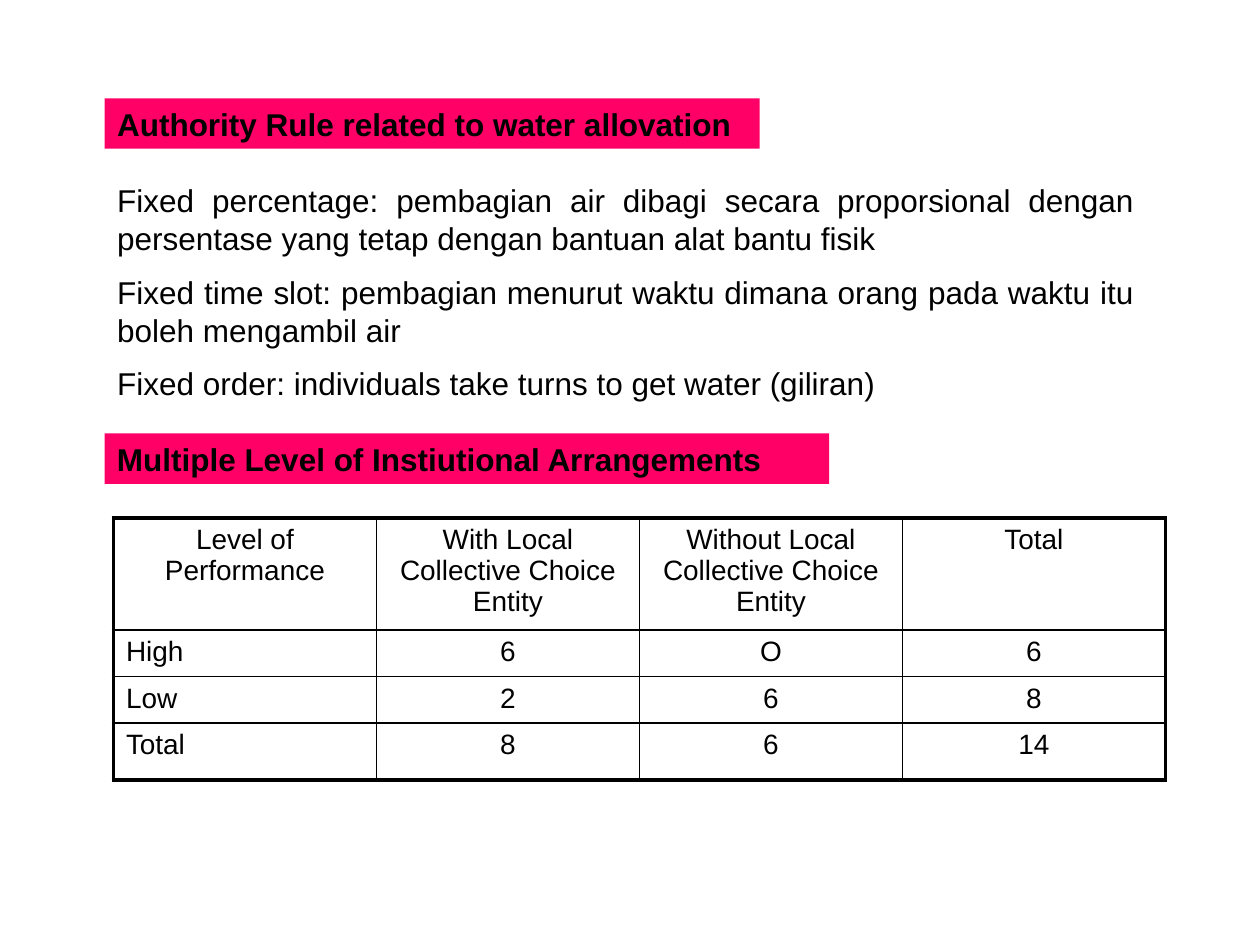
"""Build the slide on water allocation rules and institutional arrangements."""
from dataclasses import dataclass

from lxml.etree import SubElement
from pptx import Presentation
from pptx.dml.color import RGBColor
from pptx.enum.text import MSO_ANCHOR, MSO_AUTO_SIZE, PP_ALIGN
from pptx.oxml.ns import qn
from pptx.util import Inches, Pt

BLACK, PINK = "000000", "FF0066"
THIN, THICK = 1, 2.25
LEFT = 0.83
RULES = [
    "Fixed percentage: pembagian air dibagi secara proporsional dengan "
    "persentase yang tetap dengan bantuan alat bantu fisik",
    "Fixed time slot: pembagian menurut waktu dimana orang pada waktu itu "
    "boleh mengambil air ",
    "Fixed order: individuals take turns to get water (giliran)",
]
ROWS = [
    ["Level of Performance", "With Local Collective Choice Entity",
     "Without Local Collective Choice Entity", "Total"],
    ["High", "6", "O", "6"],
    ["Low", "2", "6", "8"],
    ["Total", "8", "6", "14"],
]
ROW_HEIGHTS = [0.89, 0.37, 0.37, 0.45]


@dataclass
class Block:
    top: float
    width: float
    height: float
    lines: list[str]
    align: PP_ALIGN = PP_ALIGN.LEFT
    bold: bool = False
    fill: str | None = None


TITLE = Block(0.78, 5.2, 0.4, ["Authority Rule related to water allovation"],
              bold=True, fill=PINK)
BODY = Block(1.39, 8.27, 1.9, RULES, align=PP_ALIGN.JUSTIFY)
SUBTITLE = Block(3.44, 5.75, 0.4, ["Multiple Level of Instiutional Arrangements"],
                 bold=True, fill=PINK)


def color(value: str) -> RGBColor:
    return RGBColor.from_string(value)


def style(p, size: float, align: PP_ALIGN, before: float, bold: bool = False) -> None:
    p.alignment = align
    p.space_before = Pt(before)
    p.font.name = "Arial"
    p.font.size = Pt(size)
    p.font.bold = bold
    p.font.color.rgb = color(BLACK)


def fill_block(sp, block: Block) -> None:
    sp.left, sp.top = Inches(LEFT), Inches(block.top)
    sp.width, sp.height = Inches(block.width), Inches(block.height)
    if block.fill:
        sp.fill.solid()
        sp.fill.fore_color.rgb = color(block.fill)
    tf = sp.text_frame
    tf.word_wrap = True
    tf.auto_size = MSO_AUTO_SIZE.NONE
    tf.vertical_anchor = MSO_ANCHOR.TOP
    tf.text = "\n".join(block.lines)
    for p in tf.paragraphs:
        style(p, 18, block.align, 9, block.bold)
        pPr = p._p.get_or_add_pPr()
        pPr.set("marL", "0")
        pPr.set("indent", "0")
        pPr.insert_element_before(pPr.makeelement(qn("a:buNone"), {}), "a:defRPr")


def set_borders(cell, widths: dict[str, float]) -> None:
    tcPr = cell._tc.get_or_add_tcPr()
    for i, (side, width) in enumerate(widths.items()):
        ln = tcPr.makeelement(qn(f"a:ln{side}"), {"w": str(Pt(width))})
        fill = SubElement(ln, qn("a:solidFill"))
        SubElement(fill, qn("a:srgbClr"), val=BLACK)
        tcPr.insert(i, ln)


def add_grid(s, rows: list[list[str]]) -> None:
    n_rows, n_cols = len(rows), len(rows[0])
    table = s.shapes.add_table(n_rows, n_cols, Inches(0.9), Inches(4.11),
                               Inches(8.35), Inches(sum(ROW_HEIGHTS))).table
    table.first_row = table.horz_banding = False
    for r, texts in enumerate(rows):
        table.rows[r].height = Inches(ROW_HEIGHTS[r])
        for c, text in enumerate(texts):
            cell = table.cell(r, c)
            cell.text = text
            cell.fill.background()
            align = PP_ALIGN.LEFT if r and not c else PP_ALIGN.CENTER
            style(cell.text_frame.paragraphs[0], 16, align, 3.2)
            set_borders(cell, {
                "L": THICK if c == 0 else THIN,
                "R": THICK if c == n_cols - 1 else THIN,
                "T": THICK if r == 0 else THIN,
                "B": THICK if r == n_rows - 1 else THIN,
            })


def main() -> None:
    prs = Presentation()
    prs.slide_width, prs.slide_height = Inches(10), Inches(7.5)
    s = prs.slides.add_slide(prs.slide_layouts[1])
    fill_block(s.shapes.title, TITLE)
    fill_block(s.placeholders[1], BODY)
    fill_block(s.shapes.add_textbox(0, 0, 0, 0), SUBTITLE)
    add_grid(s, ROWS)
    prs.save("out.pptx")


if __name__ == "__main__":
    main()
